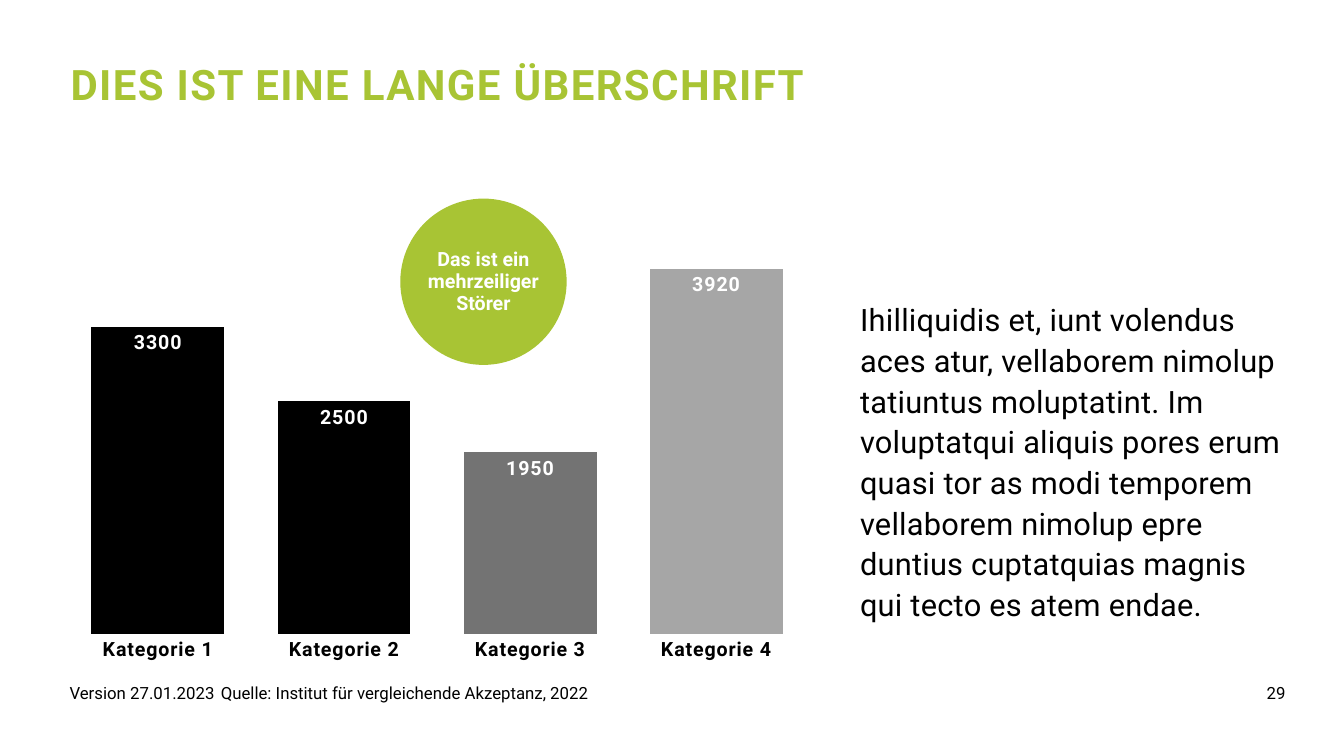
from lxml import etree
from pptx import Presentation
from pptx.chart.data import CategoryChartData
from pptx.dml.color import RGBColor
from pptx.enum.chart import XL_CHART_TYPE as ChartType, XL_LABEL_POSITION as LabelPos
from pptx.enum.chart import XL_TICK_MARK as Tick
from pptx.enum.shapes import MSO_SHAPE as Shape
from pptx.enum.text import MSO_ANCHOR as Anchor, MSO_AUTO_SIZE as AutoSize, PP_ALIGN as Align
from pptx.oxml import parse_xml
from pptx.oxml.ns import nsdecls, qn
from pptx.util import Inches, Pt

# Content
HEADING = "DIES IST EINE LANGE ÜBERSCHRIFT"
BODY = ("Ihilliquidis et, iunt volendus aces atur, vellaborem nimolup tatiuntus "
        "moluptatint. Im voluptatqui aliquis pores erum quasi tor as modi temporem "
        "vellaborem nimolup epre duntius cuptatquias magnis\vqui tecto es atem endae.")
BADGE = "Das ist ein mehrzeiliger Störer"
SOURCE = "Version 27.01.2023\tQuelle: Institut für vergleichende Akzeptanz, 2022"
PAGE = "29"
COLUMNS = [  # category, value, colour
    ("Kategorie 1", 3300, "000000"),
    ("Kategorie 2", 2500, "000000"),
    ("Kategorie 3", 1950, "737373"),
    ("Kategorie 4", 3920, "A6A6A6"),
]
GREEN, BLACK, WHITE = "A8C434", "000000", "FFFFFF"
PLOT_AREA = {"x": 0.02, "y": 0.02, "w": 0.96, "h": 0.9}  # shares of the chart frame


def color(value):
    return RGBColor.from_string(value)


def set_font(font, size, tint, bold=False):
    for name, value in {"name": "Roboto", "size": Pt(size), "bold": bold}.items():
        setattr(font, name, value)
    font.color.rgb = color(tint)


def place(shape, left, top, width, height):
    for name, value in {"left": left, "top": top, "width": width, "height": height}.items():
        setattr(shape, name, Inches(value))


def write(shape, text, size, tint=BLACK, bold=False, align=Align.LEFT,
          anchor=Anchor.TOP, line=1.0, spacing=0, tab=None):
    """Fill a shape with one formatted paragraph; spacing is in points."""
    frame = shape.text_frame
    frame.text = text
    settings = {"word_wrap": True, "auto_size": AutoSize.NONE, "vertical_anchor": anchor,
                "margin_left": 0, "margin_right": 0, "margin_top": 0, "margin_bottom": 0}
    for name, value in settings.items():
        setattr(frame, name, value)
    paragraph = frame.paragraphs[0]
    for name, value in {"alignment": align, "line_spacing": line, "space_before": Pt(0)}.items():
        setattr(paragraph, name, value)
    properties = paragraph._p.get_or_add_pPr()
    properties.set("marL", "0")
    properties.set("indent", "0")
    etree.SubElement(properties, qn("a:buNone"))
    if tab:
        stops = etree.SubElement(properties, qn("a:tabLst"))
        etree.SubElement(stops, qn("a:tab"), pos=str(Inches(tab)), algn="l")
    for run in paragraph.runs:
        set_font(run.font, size, tint, bold)
        run.font._element.set("spc", str(round(spacing * 100)))


prs = Presentation()
prs.slide_width, prs.slide_height = Inches(13.33), Inches(7.5)
slide = prs.slides.add_slide(prs.slide_layouts[1])
heading, body = slide.placeholders

# Column chart
data = CategoryChartData()
data.categories = [category for category, _, _ in COLUMNS]
data.add_series("Series 1", [value for _, value, _ in COLUMNS])
chart = slide.shapes.add_chart(
    ChartType.COLUMN_CLUSTERED, Inches(0.49), Inches(2.04), Inches(7.69), Inches(4.62), data).chart
chart.has_legend = chart.has_title = False
set_font(chart.font, 10, BLACK)

categories, values = chart.category_axis, chart.value_axis
categories.major_tick_mark = Tick.NONE
categories.format.line.fill.background()
set_font(categories.tick_labels.font, 14, BLACK, True)
for name, value in {"minimum_scale": 0, "maximum_scale": 4500,
                    "has_major_gridlines": False, "visible": False}.items():
    setattr(values, name, value)

plot = chart.plots[0]
plot.gap_width, plot.overlap, plot.vary_by_categories = 40, 100, False
columns = plot.series[0]
for index, (_, _, tint) in enumerate(COLUMNS):
    fill = columns.points[index].format.fill
    fill.solid()
    fill.fore_color.rgb = color(tint)
labels = columns.data_labels
labels.show_value, labels.position = True, LabelPos.INSIDE_END
set_font(labels.font, 14, WHITE, True)

# Fixed plot area and letter spacing of the chart text
edges = "".join(f'<c:{side}Mode val="edge"/>' for side in "xy")
shares = "".join(f'<c:{side} val="{share}"/>' for side, share in PLOT_AREA.items())
layout = parse_xml(f'<c:layout {nsdecls("c")}><c:manualLayout><c:layoutTarget val="inner"/>'
                   f'{edges}{shares}</c:manualLayout></c:layout>')
plot_area = chart._chartSpace.chart.plotArea
for automatic in plot_area.findall(qn("c:layout")):
    plot_area.remove(automatic)
plot_area.insert(0, layout)
for properties in plot_area.iter(qn("a:defRPr")):
    properties.set("spc", "50")

# Heading and body text
place(heading, 0.7, 0.66, 8.2, 1.12)
write(heading, HEADING, 30, GREEN, True, line=0.85, spacing=1)
place(body, 8.53, 2.95, 4.21, 3.49)
write(body, BODY, 22, line=1.1, spacing=0.2)

# Round badge
badge = slide.shapes.add_shape(
    Shape.OVAL, Inches(3.97), Inches(1.97), Inches(1.65), Inches(1.65))
badge.shadow.inherit = False
badge.fill.solid()
badge.fill.fore_color.rgb = color(GREEN)
badge.line.fill.background()
write(badge, BADGE, 14, WHITE, True, Align.CENTER, Anchor.MIDDLE, line=0.95)

# Footer
for text, left, width, align, tab in [(SOURCE, 0.69, 8.23, Align.LEFT, 1.56),
                                      (PAGE, 10.6, 2.15, Align.RIGHT, None)]:
    footer = slide.shapes.add_textbox(Inches(left), Inches(6.77), Inches(width), Inches(0.4))
    write(footer, text, 12, align=align, tab=tab)

prs.save("out.pptx")
